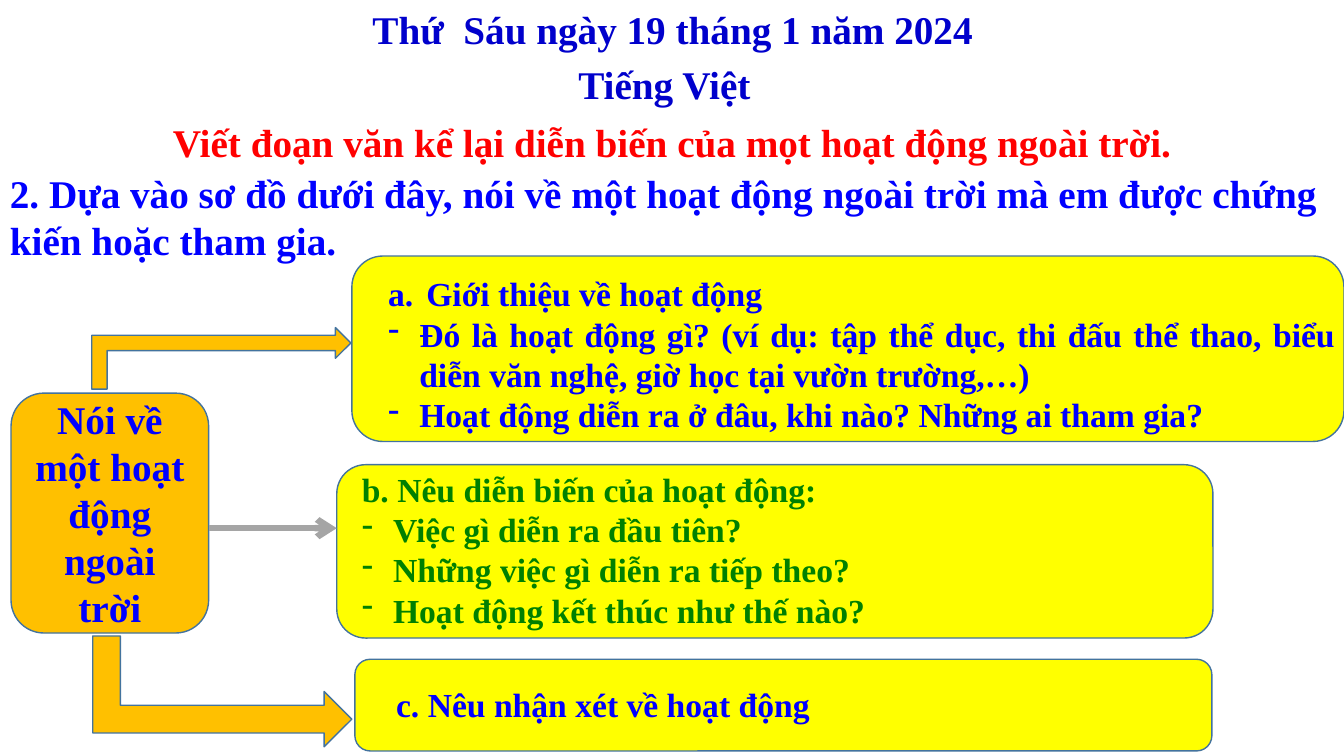
from lxml.etree import SubElement
from pptx import Presentation
from pptx.dml.color import RGBColor
from pptx.enum.shapes import MSO_CONNECTOR, MSO_SHAPE
from pptx.enum.text import MSO_ANCHOR, PP_ALIGN
from pptx.oxml.ns import qn
from pptx.util import Inches, Pt

BLUE = RGBColor(0x00, 0x00, 0xFF)
NAVY = RGBColor(0x00, 0x00, 0xCC)
RED = RGBColor(0xFF, 0x00, 0x00)
GREEN = RGBColor(0x00, 0x80, 0x00)
GOLD = RGBColor(0xFF, 0xC0, 0x00)
YELLOW = RGBColor(0xFF, 0xFF, 0x00)
STEEL = RGBColor(0x43, 0x73, 0x9E)
GRAY = RGBColor(0xA5, 0xA5, 0xA5)

LEFT, MID, JUST = PP_ALIGN.LEFT, PP_ALIGN.CENTER, PP_ALIGN.JUSTIFY
MARKS = {
    "-": (0.31, "a:buChar", {"char": "-"}),
    "a.": (0.38, "a:buAutoNum", {"type": "alphaLcPeriod"}),
}

prs = Presentation()
prs.slide_width, prs.slide_height = Inches(13.33), Inches(7.5)
slide = prs.slides.add_slide(prs.slide_layouts[6])
shapes = slide.shapes


def write(frame, lines, size, color, align):
    """Fill a text frame with (mark, text) lines."""
    frame.word_wrap = True
    for i, (mark, text) in enumerate(lines):
        para = frame.add_paragraph() if i else frame.paragraphs[0]
        para.alignment = align
        if mark:
            indent, tag, attrs = MARKS[mark]
            props = para._p.get_or_add_pPr()
            props.set("marL", str(Inches(indent)))
            props.set("indent", str(-Inches(indent)))
            SubElement(props, qn("a:buFontTx"))
            SubElement(props, qn(tag), attrs)
        run = para.add_run()
        run.text = text
        look = {"name": "Times New Roman", "size": Pt(size), "bold": True}
        for key, value in look.items():
            setattr(run.font, key, value)
        run.font.color.rgb = color


def draw(kind, box, fill):
    """Add an outlined preset shape."""
    shape = shapes.add_shape(kind, *map(Inches, box))
    shape.shadow.inherit = False
    shape.fill.solid()
    shape.fill.fore_color.rgb = fill
    shape.line.color.rgb = STEEL
    shape.line.width = Pt(1)
    return shape


# Topic box and the three branch boxes
topic = draw(MSO_SHAPE.ROUNDED_RECTANGLE, (0.11, 3.9, 1.96, 2.38), GOLD)
topic.text_frame.vertical_anchor = MSO_ANCHOR.MIDDLE
write(topic.text_frame, [("", "Nói về một hoạt động ngoài trời")], 28, BLUE, MID)
for box in [(3.49, 2.54, 9.84, 1.84), (3.34, 4.61, 8.69, 1.72), (3.52, 6.54, 8.5, 0.91)]:
    draw(MSO_SHAPE.ROUNDED_RECTANGLE, box, YELLOW)

# Bent arrows to the top and bottom branches
for box, flip in [((0.91, 3.25, 2.57, 0.61), False), ((0.92, 6.31, 2.57, 1.1), True)]:
    bent = draw(MSO_SHAPE.BENT_ARROW, box, GOLD)
    for i, value in enumerate((0.25, 0.25, 0.25, 0)):
        bent.adjustments[i] = value
    if flip:
        bent._element.spPr.find(qn("a:xfrm")).set("flipV", "1")

# Straight arrow to the middle branch
ends = map(Inches, (2.07, 5.24, 3.34, 5.24))
arrow = shapes.add_connector(MSO_CONNECTOR.STRAIGHT, *ends)
arrow.line.color.rgb = GRAY
arrow.line.width = Pt(4.5)
SubElement(arrow.line._get_or_add_ln(), qn("a:tailEnd"), type="arrow")
SubElement(arrow._element.spPr, qn("a:effectLst"))

# Headings, task and branch texts
texts = [
    ((1.67, 0, 10, 0.57), 28, NAVY, MID, [("", "Thứ  Sáu ngày 19 tháng 1 năm 2024")]),
    ((2.84, 0.55, 7.5, 0.57), 28, NAVY, MID, [("", "Tiếng Việt")]),
    ((0, 1.12, 13.33, 0.57), 28, RED, MID, [
        ("", "Viết đoạn văn kể lại diễn biến của mọt hoạt động ngoài trời.")]),
    ((0, 1.63, 13.33, 1.04), 28, BLUE, LEFT, [
        ("", "2. Dựa vào sơ đồ dưới đây, nói về một hoạt động ngoài trời "
             "mà em được chứng kiến hoặc tham gia.")]),
    ((3.75, 2.66, 9.59, 1.72), 24, BLUE, JUST, [
        ("a.", "Giới thiệu về hoạt động"),
        ("-", "Đó là hoạt động gì? (ví dụ: tập thể dục, thi đấu thể thao, "
              "biểu diễn văn nghệ, giờ học tại vườn trường,…)"),
        ("-", "Hoạt động diễn ra ở đâu, khi nào? Những ai tham gia?")]),
    ((3.49, 4.6, 7.85, 1.72), 24, GREEN, JUST, [
        ("", "b. Nêu diễn biến của hoạt động:"),
        ("-", "Việc gì diễn ra đầu tiên?"),
        ("-", "Những việc gì diễn ra tiếp theo?"),
        ("-", "Hoạt động kết thúc như thế nào?")]),
    ((3.83, 6.74, 7.68, 0.5), 24, BLUE, LEFT, [("", "c. Nêu nhận xét về hoạt động")]),
]
for box, size, color, align, lines in texts:
    label = shapes.add_textbox(*map(Inches, box))
    write(label.text_frame, lines, size, color, align)

prs.save("out.pptx")
